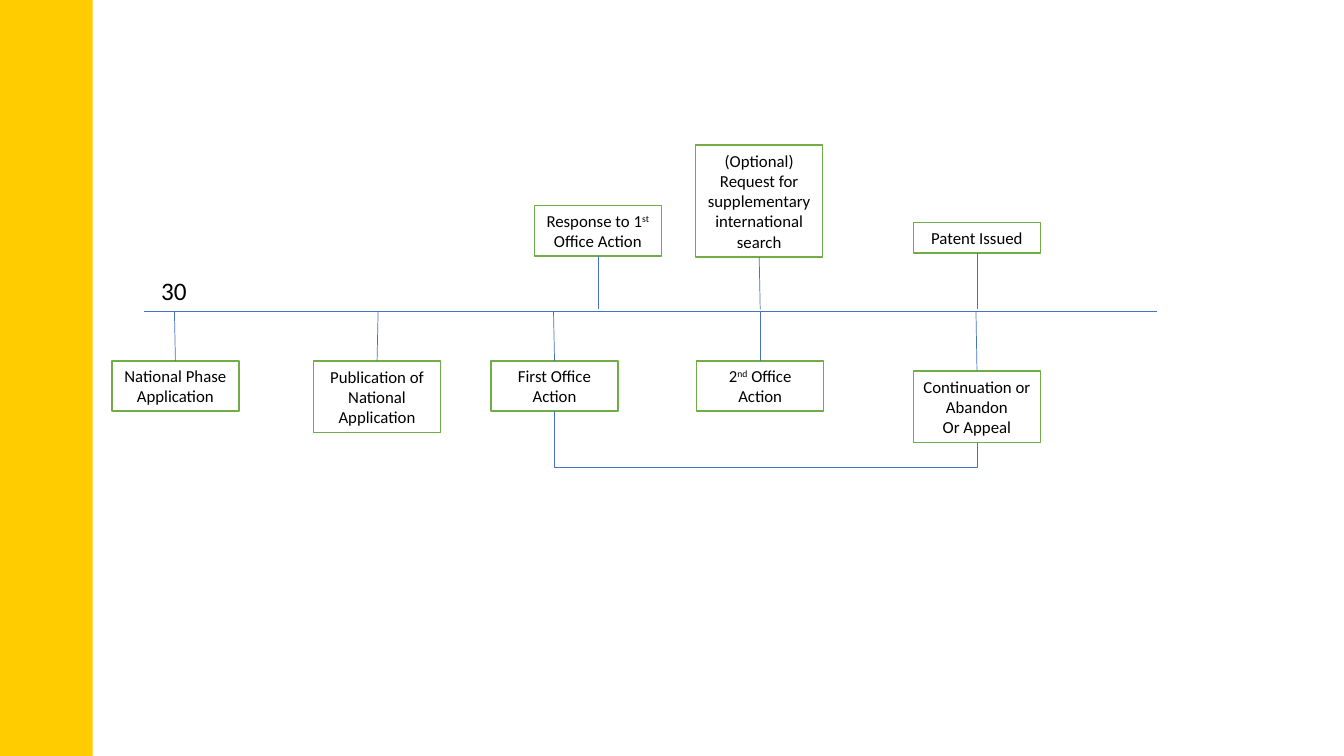
import dataclasses

import pptx
import pptx.dml.color
import pptx.enum.shapes
import pptx.enum.text
import pptx.oxml
import pptx.oxml.ns
import pptx.shapes.autoshape
import pptx.shapes.connector
import pptx.slide
import pptx.text.text
import pptx.util

Inches = pptx.util.Inches
Kind = pptx.enum.shapes.MSO_CONNECTOR
Align = pptx.enum.text.PP_ALIGN


@dataclasses.dataclass(frozen=True)
class Theme:
    font: str = "Calibri"
    body: float = 12
    month: float = 18
    ink: str = "000000"
    paper: str = "FFFFFF"
    band: str = "FFCC00"
    edge: str = "70AD47"
    rule: str = "4472C4"
    edge_width: float = 1
    rule_width: float = 0.5


@dataclasses.dataclass(frozen=True)
class Step:
    text: str  # ^ marks superscript, a line break starts a paragraph
    left: float
    rows: int
    foot: float  # where the stem meets the time axis
    top: float = 3.58

    @property
    def height(self) -> float:
        return round(0.1 + 0.202 * self.rows, 2)

    @property
    def mid(self) -> float:
        return self.left + BOX_WIDTH / 2

    @property
    def base(self) -> float:
        return self.top + self.height


THEME = Theme()
BOX_WIDTH = 1.26
AXIS = 3.09
STEM_END = 3.07

FIRST = Step("First Office Action", 4.87, 2, 5.49)
FINAL = Step("Continuation or Abandon\nOr Appeal", 9.06, 3, 9.68, 3.68)
BELOW = (
    Step("National Phase Application", 1.11, 2, 1.73),
    Step("Publication of National Application", 3.11, 3, 3.75),
    FIRST,
    Step("2^nd^ Office Action", 6.91, 2, 7.54),
    FINAL,
)
ABOVE = (
    Step("Response to 1^st^ Office Action", 5.3, 2, 5.93, 2.04),
    Step("(Optional)\nRequest for supplementary international search",
         6.9, 5, 7.54, 1.44),
    Step("Patent Issued", 9.06, 1, 9.69, 2.21),
)


def tint(code: str) -> pptx.dml.color.RGBColor:
    return pptx.dml.color.RGBColor.from_string(code)


def write(frame: pptx.text.text.TextFrame, text: str, *, size: float = THEME.body,
          align: Align = Align.CENTER, wrap: bool = True) -> None:
    frame.word_wrap = wrap
    frame.auto_size = pptx.enum.text.MSO_AUTO_SIZE.SHAPE_TO_FIT_TEXT
    for row, line in enumerate(text.split("\n")):
        para = frame.add_paragraph() if row else frame.paragraphs[0]
        para.alignment = align
        for part, words in enumerate(line.split("^")):
            run = para.add_run()
            run.text = words
            run.font.name = THEME.font
            run.font.size = pptx.util.Pt(size)
            run.font.color.rgb = tint(THEME.ink)
            if part % 2:
                run.font._element.set("baseline", "30000")


def draw_rect(slide: pptx.slide.Slide, left: float, top: float, width: float,
              height: float, fill: str) -> pptx.shapes.autoshape.Shape:
    rect = slide.shapes.add_shape(
        pptx.enum.shapes.MSO_SHAPE.RECTANGLE,
        Inches(left), Inches(top), Inches(width), Inches(height))
    rect.shadow.inherit = False
    rect.fill.solid()
    rect.fill.fore_color.rgb = tint(fill)
    rect.line.fill.background()
    return rect


def draw_step(slide: pptx.slide.Slide, step: Step) -> None:
    box = draw_rect(slide, step.left, step.top, BOX_WIDTH, step.height, THEME.paper)
    box.line.color.rgb = tint(THEME.edge)
    box.line.width = pptx.util.Pt(THEME.edge_width)
    write(box.text_frame, step.text)


def draw_line(slide: pptx.slide.Slide, x1: float, y1: float, x2: float, y2: float,
              kind: Kind = Kind.STRAIGHT) -> pptx.shapes.connector.Connector:
    line = slide.shapes.add_connector(
        kind, Inches(x1), Inches(y1), Inches(x2), Inches(y2))
    line.line.color.rgb = tint(THEME.rule)
    line.line.width = pptx.util.Pt(THEME.rule_width)
    line._element.spPr.append(
        pptx.oxml.parse_xml(f"<a:effectLst {pptx.oxml.ns.nsdecls('a')}/>"))
    return line


def draw_loop(slide: pptx.slide.Slide, start: Step, end: Step, drop: float) -> None:
    """Join the undersides of two boxes with an elbow that hangs below them."""
    span, rise = start.mid - end.mid, start.base - end.base
    x, y = (start.mid + end.mid) / 2, (start.base + end.base) / 2
    # The elbow is laid out upright, then turned a quarter about its centre
    loop = draw_line(slide, x + rise / 2, y - span / 2,
                     x - rise / 2, y + span / 2, Kind.ELBOW)
    shape = loop._element.spPr
    shape.find(pptx.oxml.ns.qn("a:xfrm")).set("rot", "5400000")
    guides = shape.find(pptx.oxml.ns.qn("a:prstGeom")).get_or_add_avLst()
    bend = round(-drop / rise * 100000)
    guides.append(pptx.oxml.parse_xml(
        f'<a:gd {pptx.oxml.ns.nsdecls("a")} name="adj1" fmla="val {bend}"/>'))


def main() -> None:
    deck = pptx.Presentation()
    deck.slide_width, deck.slide_height = Inches(13.33), Inches(7.5)
    slide = deck.slides.add_slide(deck.slide_layouts[6])

    # Side band and time axis
    draw_rect(slide, 0, 0, 0.92, 7.5, THEME.band)
    draw_line(slide, 1.43, AXIS, 11.48, AXIS)

    # Steps on both sides of the axis
    for step in BELOW + ABOVE:
        draw_step(slide, step)

    # Stems from boxes to the axis
    for step in BELOW:
        draw_line(slide, step.foot, AXIS, step.mid, step.top)
    for step in ABOVE:
        draw_line(slide, step.mid, step.base, step.foot, STEM_END)

    # Month mark
    month = slide.shapes.add_textbox(
        Inches(1.5), Inches(2.68), Inches(0.46), Inches(0.4))
    write(month.text_frame, "30", size=THEME.month, align=Align.LEFT, wrap=False)

    # Way back to the first action
    draw_loop(slide, FINAL, FIRST, 0.25)

    deck.save("out.pptx")


if __name__ == "__main__":
    main()
